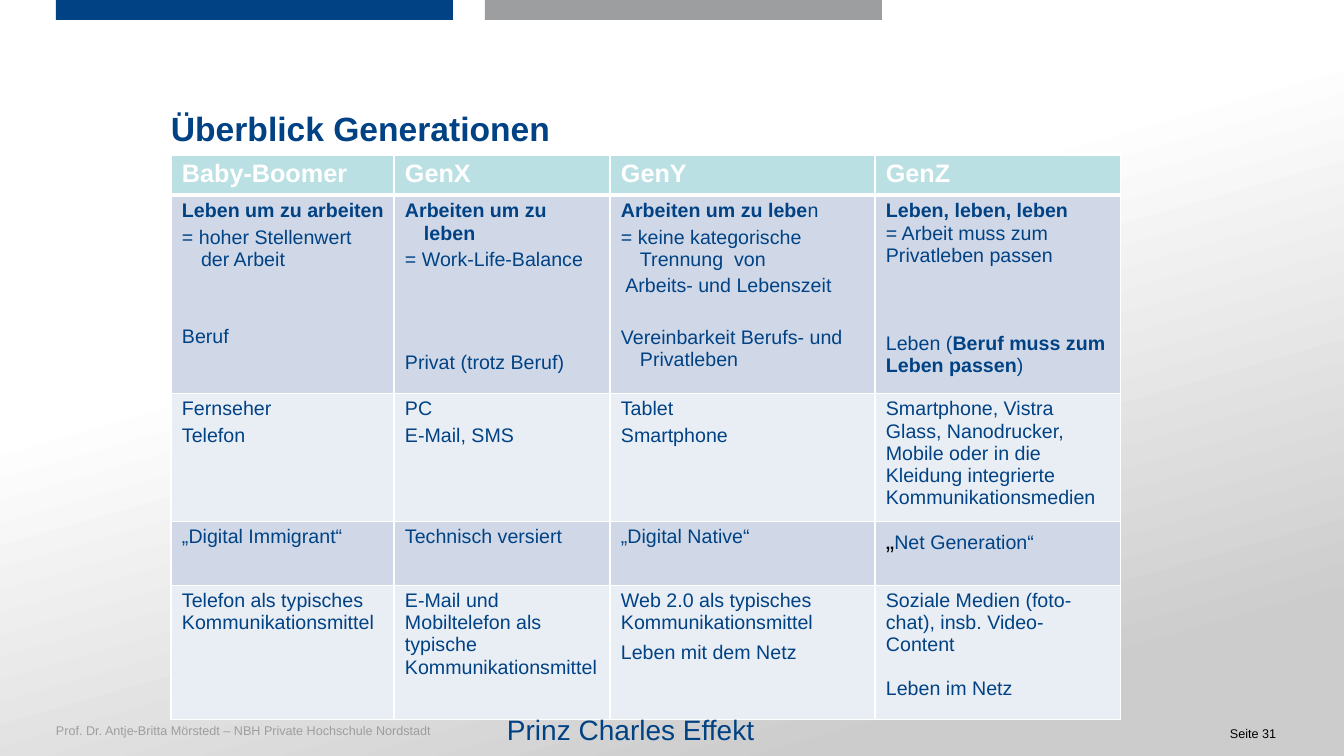
from lxml import etree
from pptx import Presentation
from pptx.dml.color import RGBColor
from pptx.enum.shapes import MSO_SHAPE
from pptx.enum.text import MSO_ANCHOR
from pptx.oxml.ns import qn
from pptx.util import Emu, Pt

RECT = MSO_SHAPE.RECTANGLE
TOP = MSO_ANCHOR.TOP
PX = 914400 / 100.8
HANG = 19
COLORS = {
    "white": "FFFFFF", "shade": "CCCCCC", "gray": "9D9EA0", "black": "000000",
    "blue": "014284", "cell": "004284", "head": "BBE0E3",
    "dark": "D0D8E8", "light": "E9EDF4",
}


def px(n):
    return Emu(round(n * PX))


def rgb(name):
    return RGBColor.from_string(COLORS[name])


def para(*runs, before=0, hang=0):
    return {"runs": runs, "before": before, "hang": hang}


def hung(*runs, before=4):
    return para(*runs, before=before, hang=HANG)


def bold(text):
    return text, {"bold": True}


def write(tf, paras, size=14, color="cell", bold=False, font="Arial"):
    for i, item in enumerate(paras):
        p = tf.paragraphs[0] if i == 0 else tf.add_paragraph()
        p.space_before = Pt(round(item["before"] * 72 / 100.8, 1))
        if item["hang"]:
            pPr = p._p.get_or_add_pPr()
            pPr.set("marL", str(px(item["hang"])))
            pPr.set("indent", str(-px(item["hang"])))
        for run in item["runs"]:
            text, own = (run, {}) if isinstance(run, str) else run
            r = p.add_run()
            r.text = text
            r.font.name = font
            r.font.size = Pt(own.get("size", size))
            r.font.bold = own.get("bold", bold)
            r.font.color.rgb = rgb(own.get("color", color))


class SlideBuilder:
    def __init__(self, prs):
        self.s = prs.slides.add_slide(prs.slide_layouts[6])

    def rect(self, x, y, w, h, color):
        sp = self.s.shapes.add_shape(RECT, px(x), px(y), px(w), px(h))
        sp.shadow.inherit = False
        sp.line.fill.background()
        sp.fill.solid()
        sp.fill.fore_color.rgb = rgb(color)
        return sp

    def gradient(self, x, y, w, h, stops, angle):
        sp = self.rect(x, y, w, h, "white")
        sp.fill.gradient()
        sp.fill.gradient_angle = 360 - angle
        for stop, (position, color) in zip(sp.fill.gradient_stops, stops):
            stop.position = position
            stop.color.rgb = rgb(color)

    def text(self, x, y, w, h, text, inset=(10, 5), **fmt):
        tf = self.s.shapes.add_textbox(px(x), px(y), px(w), px(h)).text_frame
        tf.word_wrap = True
        tf.vertical_anchor = TOP
        tf.margin_left = tf.margin_right = px(inset[0])
        tf.margin_top = tf.margin_bottom = px(inset[1])
        write(tf, [para(text)], **fmt)

    def borders(self, cell, **widths):
        tcPr = cell._tc.get_or_add_tcPr()
        for side in "LRTB":
            ln = etree.SubElement(tcPr, qn("a:ln" + side), w=str(Pt(widths.get(side, 1))))
            fill = etree.SubElement(ln, qn("a:solidFill"))
            etree.SubElement(fill, qn("a:srgbClr"), val=COLORS["white"])

    def table(self, x, y, cols, rows, header, body):
        frame = self.s.shapes.add_table(
            len(rows), len(cols), px(x), px(y), px(sum(cols)), px(sum(rows)))
        table = frame.table
        for column, width in zip(table.columns, cols):
            column.width = px(width)
        for row, height in zip(table.rows, rows):
            row.height = px(height)
        for i, line in enumerate([[[para(name)] for name in header]] + body):
            for j, paras in enumerate(line):
                cell = table.cell(i, j)
                cell.margin_left, cell.margin_right = px(11), px(10)
                cell.margin_top = cell.margin_bottom = px(5)
                self.borders(cell, T=3 if i == 1 else 1, B=3 if i == 0 else 1)
                cell.fill.solid()
                fill = "head" if i == 0 else "dark" if i % 2 else "light"
                cell.fill.fore_color.rgb = rgb(fill)
                if i == 0:
                    write(cell.text_frame, paras, size=18, color="white", bold=True)
                else:
                    write(cell.text_frame, paras)


GENERATIONS = ["Baby-Boomer", "GenX", "GenY", "GenZ"]
ATTITUDE = [
    [hung(bold("Leben um zu arbeiten")),
     hung("= hoher Stellenwert der Arbeit"),
     hung("Beruf", before=55)],
    [hung(bold("Arbeiten um zu leben")),
     hung("= Work-Life-Balance"),
     hung("Privat (trotz Beruf)", before=81)],
    [hung(bold("Arbeiten um zu lebe"), "n"),
     hung("= keine kategorische Trennung  von"),
     hung(" Arbeits- und Lebenszeit"),
     hung("Vereinbarkeit Berufs- und Privatleben", before=30)],
    [para(bold("Leben, leben, leben")),
     para("= Arbeit muss zum Privatleben passen"),
     para("Leben (", bold("Beruf muss zum Leben passen"), ")", before=66)],
]
DEVICES = [
    [hung("Fernseher"), hung("Telefon")],
    [hung("PC"), hung("E-Mail, SMS")],
    [hung("Tablet"), hung("Smartphone")],
    [para("Smartphone, Vistra Glass, Nanodrucker,"),
     para("Mobile oder in die Kleidung integrierte Kommunikationsmedien")],
]
LABELS = [
    [hung("„Digital Immigrant“")],
    [para("Technisch versiert")],
    [para("„Digital Native“")],
    [para(("„", {"size": 18, "color": "black"}), "Net Generation“")],
]
CHANNELS = [
    [para("Telefon als typisches Kommunikationsmittel")],
    [para("E-Mail und Mobiltelefon als typische Kommunikationsmittel")],
    [para("Web 2.0 als typisches Kommunikationsmittel"),
     para("Leben mit dem Netz", before=8)],
    [para("Soziale Medien (foto-chat), insb. Video-Content"),
     para("Leben im Netz", before=22)],
]


def main():
    prs = Presentation()
    prs.slide_width, prs.slide_height = px(1344), px(756)
    b = SlideBuilder(prs)
    b.gradient(0, 0, 1344, 756, [(0.38, "white"), (0.87, "shade")], 74)
    b.text(56, 723, 1064, 15,
           "Prof. Dr. Antje-Britta Mörstedt – NBH Private Hochschule Nordstadt",
           inset=(0, 0), size=9, color="gray")
    b.rect(485, 0, 397, 20, "gray")
    b.rect(56, 0, 397, 20, "blue")
    b.text(1219, 720, 82, 27, "Seite 31", inset=(11, 6), size=9, color="black")
    b.table(171, 155, [223, 216, 265, 246], [40, 198, 128, 64, 134],
            GENERATIONS, [ATTITUDE, DEVICES, LABELS, CHANNELS])
    b.text(161, 103, 983, 126, "Überblick Generationen", size=24, color="blue", bold=True)
    b.text(497, 707, 280, 44, "Prinz Charles Effekt", size=20, color="blue")
    prs.save("out.pptx")


if __name__ == "__main__":
    main()
